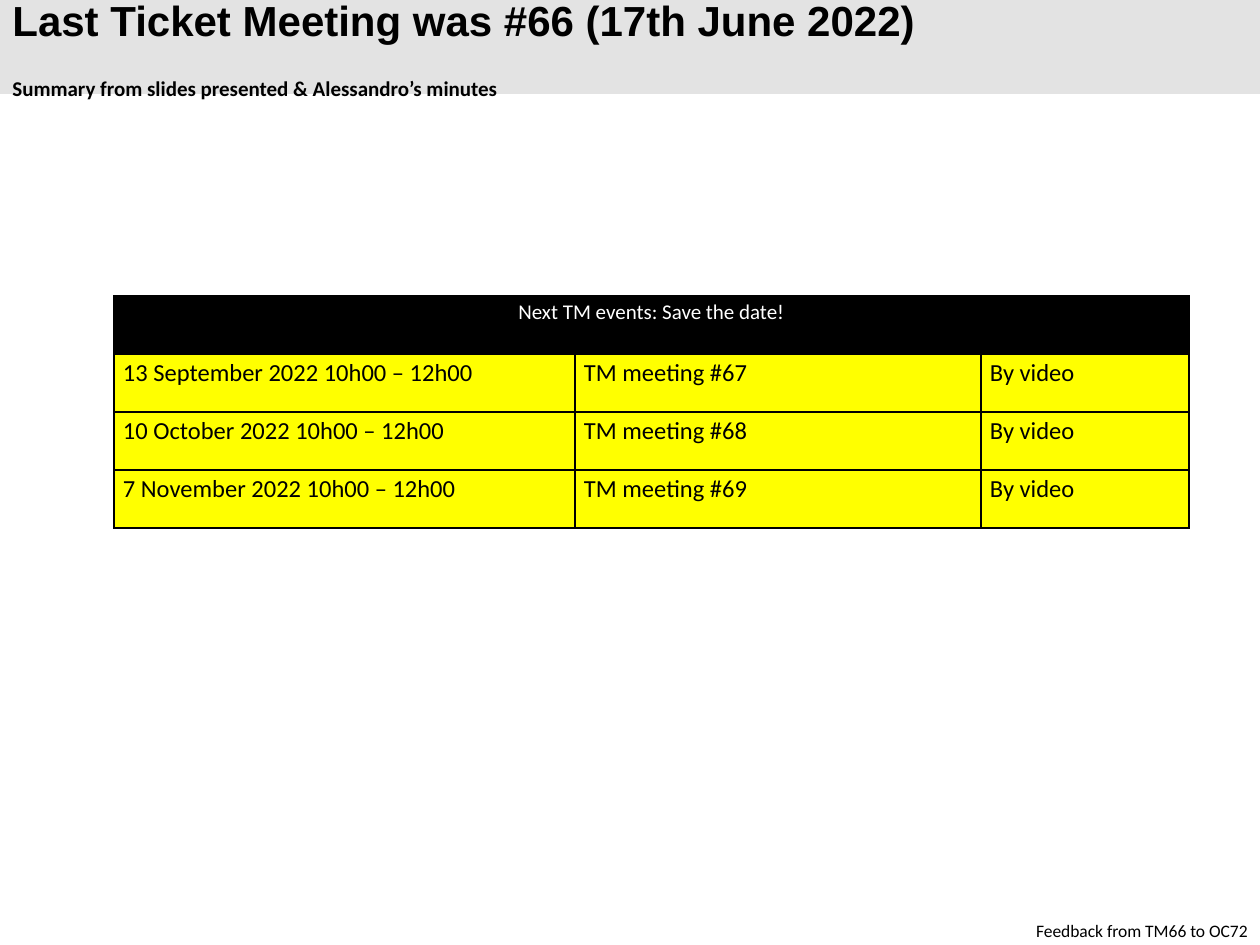
from lxml.etree import SubElement
from pptx import Presentation
from pptx.dml.color import RGBColor
from pptx.enum.shapes import MSO_SHAPE
from pptx.enum.text import MSO_ANCHOR, PP_ALIGN
from pptx.oxml.ns import qn
from pptx.util import Pt

TITLE = "Last Ticket Meeting was #66 (17th June 2022)"
SUBTITLE = "Summary from slides presented & Alessandro’s minutes"
FOOTER = "Feedback from TM66 to OC72"
TABLE_HEADING = "Next TM events: Save the date!"
EVENTS = [
    ("13 September 2022 10h00 – 12h00", "TM meeting #67", "By video"),
    ("10 October 2022 10h00 – 12h00", "TM meeting #68", "By video"),
    ("7 November 2022 10h00 – 12h00", "TM meeting #69", "By video"),
]

BLACK = RGBColor(0x00, 0x00, 0x00)
WHITE = RGBColor(0xFF, 0xFF, 0xFF)
GREY = RGBColor(0xE3, 0xE3, 0xE3)
YELLOW = RGBColor(0xFF, 0xFF, 0x00)

PX = 914400 // 126
SLIDE_W, SLIDE_H = 1260, 945
BANNER_H = 94
TABLE_LEFT, TABLE_TOP = 114, 296
COLUMN_WIDTHS = (461, 406, 208)
ROW_H = 58
CELL_INSET = 9


def px(*lengths):
    return [length * PX for length in lengths]


def add_run(paragraph, text, size, color=BLACK, font="Calibri", bold=False):
    run = paragraph.add_run()
    run.text = text
    run.font.size = Pt(size)
    run.font.name = font
    run.font.bold = bold
    run.font.color.rgb = color


def add_text_box(slide, left, top, width, height):
    """Add a wrapping, vertically centred text box and return its paragraph."""
    frame = slide.shapes.add_textbox(*px(left, top, width, height)).text_frame
    frame.word_wrap = True
    frame.vertical_anchor = MSO_ANCHOR.MIDDLE
    return frame.paragraphs[0]


def style_cell(cell, fill):
    """Give a cell its insets, black 1 pt borders and fill."""
    cell.margin_left = cell.margin_right = CELL_INSET * PX
    cell.margin_top = cell.margin_bottom = 0
    properties = cell._tc.get_or_add_tcPr()
    for side in ("a:lnL", "a:lnR", "a:lnT", "a:lnB"):
        border = SubElement(properties, qn(side), w=str(Pt(1)))
        solid = SubElement(border, qn("a:solidFill"))
        SubElement(solid, qn("a:srgbClr"), val=str(BLACK))
    cell.fill.solid()
    cell.fill.fore_color.rgb = fill


def write_cell(cell, text, size, color=BLACK, align=PP_ALIGN.LEFT):
    paragraph = cell.text_frame.paragraphs[0]
    paragraph.alignment = align
    paragraph.line_spacing = 1.15
    add_run(paragraph, text, size, color)


def add_banner(slide):
    banner = slide.shapes.add_shape(MSO_SHAPE.RECTANGLE, *px(0, 0, SLIDE_W, BANNER_H))
    banner.shadow.inherit = False
    banner.fill.solid()
    banner.fill.fore_color.rgb = GREY
    banner.line.fill.background()

    heading = add_text_box(slide, 0, 0, 1245, 89)
    heading.line_spacing = Pt(32)
    add_run(heading, TITLE, 24, font="Arial", bold=True)
    heading.add_line_break()
    add_run(heading, SUBTITLE, 12, bold=True)


def add_events_table(slide):
    row_count = len(EVENTS) + 1
    table = slide.shapes.add_table(
        row_count, len(COLUMN_WIDTHS),
        *px(TABLE_LEFT, TABLE_TOP, sum(COLUMN_WIDTHS), row_count * ROW_H),
    ).table
    for column, width in zip(table.columns, COLUMN_WIDTHS):
        column.width = width * PX
    for index, row in enumerate(table.rows):
        row.height = ROW_H * PX
        for cell in row.cells:
            style_cell(cell, YELLOW if index else BLACK)

    heading = table.cell(0, 0)
    heading.merge(table.cell(0, len(COLUMN_WIDTHS) - 1))
    write_cell(heading, TABLE_HEADING, 12, WHITE, PP_ALIGN.CENTER)
    for row_index, event in enumerate(EVENTS, start=1):
        for column_index, text in enumerate(event):
            write_cell(table.cell(row_index, column_index), text, 14)


def main():
    deck = Presentation()
    deck.slide_width, deck.slide_height = px(SLIDE_W, SLIDE_H)
    slide = deck.slides.add_slide(deck.slide_layouts[6])
    add_banner(slide)
    footer = add_text_box(slide, 640, 912, 620, 37)
    footer.alignment = PP_ALIGN.RIGHT
    add_run(footer, FOOTER, 10)
    add_events_table(slide)
    deck.save("out.pptx")


if __name__ == "__main__":
    main()
